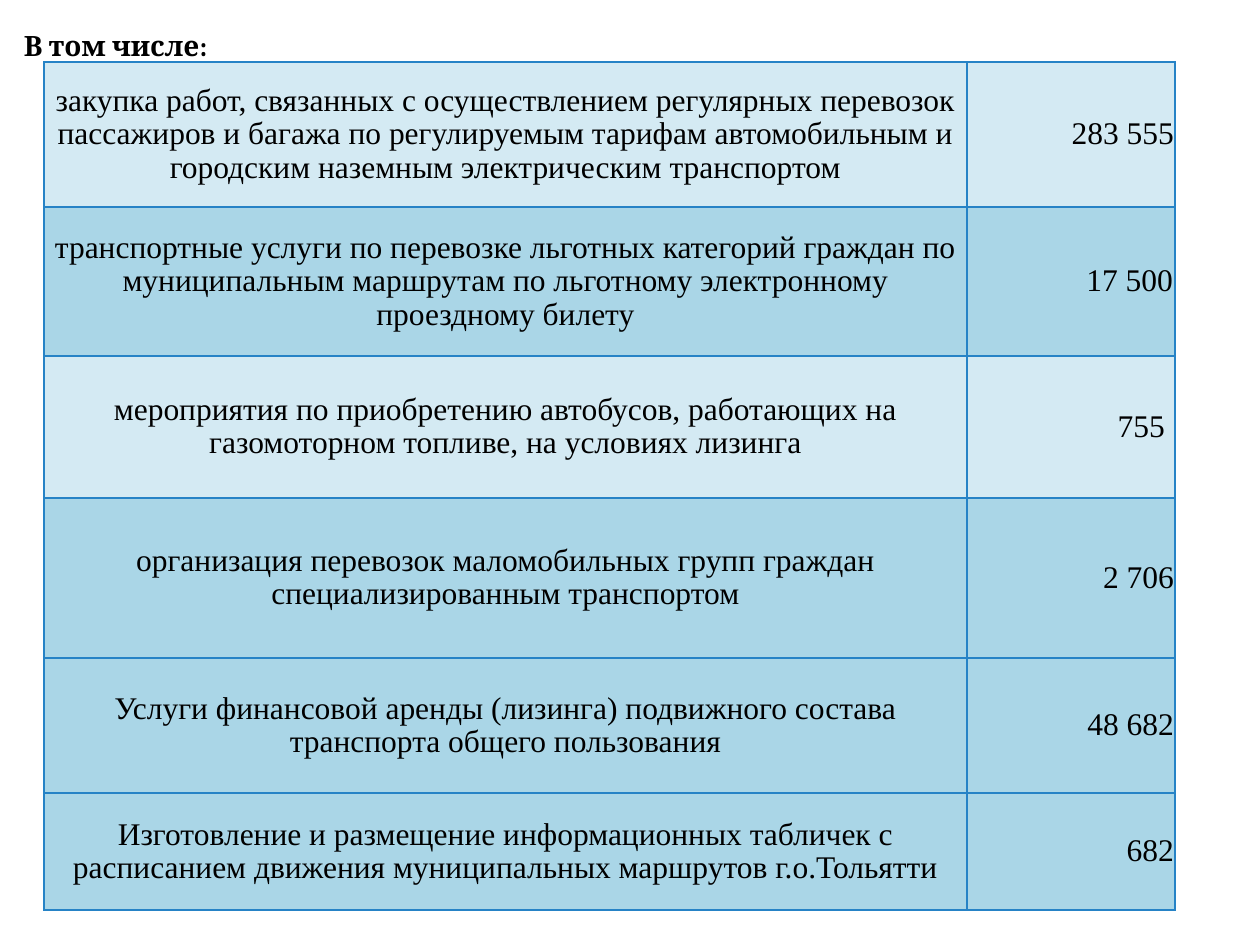
from pptx import Presentation
from pptx.dml.color import RGBColor
from pptx.enum.text import MSO_ANCHOR, PP_ALIGN
from pptx.oxml import parse_xml
from pptx.oxml.ns import nsdecls
from pptx.util import Emu, Pt

PX = 914400 // 126
COLORS = {"text": "000000", "border": "2683C6", "light": "D4EAF3", "dark": "AAD6E7"}
COLUMN_WIDTHS = (923, 208)
# Expense, amount, row height, fill, right margin of the amount
EXPENSES = [
    ("закупка работ, связанных с осуществлением регулярных перевозок пассажиров и багажа "
     "по регулируемым тарифам автомобильным и городским наземным электрическим транспортом",
     "283 555", 145, "light", 1),
    ("транспортные услуги по перевозке льготных категорий граждан по муниципальным "
     "маршрутам по льготному электронному проездному билету", "17 500", 149, "dark", 2),
    ("мероприятия по приобретению автобусов, работающих на газомоторном топливе, "
     "на условиях лизинга", "755", 142, "light", 10),
    ("организация перевозок маломобильных групп граждан специализированным транспортом",
     "2 706", 160, "dark", 1),
    ("Услуги финансовой аренды (лизинга) подвижного состава транспорта общего пользования",
     "48 682", 135, "dark", 1),
    ("Изготовление и размещение информационных табличек с расписанием движения "
     "муниципальных маршрутов г.о.Тольятти", "682", 117, "dark", 1),
]


def px(length):
    return Emu(length * PX)


def color(name):
    return RGBColor.from_string(COLORS[name])


def format_text(frame, font_name, size, align, spacing, bold=False):
    para = frame.paragraphs[0]
    para.alignment = align
    para.line_spacing = spacing
    for span in para.runs:
        span.font.name = font_name
        span.font.size = Pt(size)
        span.font.bold = bold
        span.font.color.rgb = color("text")


def add_heading(page, text):
    box = page.shapes.add_textbox(0, px(26), px(1260), px(69))
    frame = box.text_frame
    frame.word_wrap = True
    frame.margin_left = px(24)
    frame.text = text
    format_text(frame, "Cambria", 16, PP_ALIGN.LEFT, 0.9, bold=True)


def add_borders(cell):
    properties = cell._tc.get_or_add_tcPr()
    for position, side in enumerate(("lnL", "lnR", "lnT", "lnB")):
        properties.insert(position, parse_xml(
            f'<a:{side} {nsdecls("a")} w="{Pt(1)}"><a:solidFill>'
            f'<a:srgbClr val="{COLORS["border"]}"/></a:solidFill></a:{side}>'))


def fill_cell(cell, text, fill, align, right_margin=1):
    cell.text = text
    cell.vertical_anchor = MSO_ANCHOR.MIDDLE
    cell.margin_left = cell.margin_top = px(1)
    cell.margin_right = px(right_margin)
    cell.margin_bottom = 0
    cell.fill.solid()
    cell.fill.fore_color.rgb = color(fill)
    format_text(cell.text_frame, "Times New Roman", 18, align, 0.95)
    add_borders(cell)


def add_expense_table(page):
    total_height = sum(expense[2] for expense in EXPENSES)
    table = page.shapes.add_table(len(EXPENSES), len(COLUMN_WIDTHS), px(44), px(62),
                                  px(sum(COLUMN_WIDTHS)), px(total_height)).table
    table.first_row = table.horz_banding = False
    for column, width in zip(table.columns, COLUMN_WIDTHS):
        column.width = px(width)
    for row, (expense, amount, height, fill, margin) in zip(table.rows, EXPENSES):
        row.height = px(height)
        fill_cell(row.cells[0], expense, fill, PP_ALIGN.CENTER)
        fill_cell(row.cells[1], amount, fill, PP_ALIGN.RIGHT, margin)


def main():
    deck = Presentation()
    deck.slide_width, deck.slide_height = px(1260), px(945)
    page = deck.slides.add_slide(deck.slide_layouts[6])
    add_heading(page, "В том числе:")
    add_expense_table(page)
    deck.save("out.pptx")


if __name__ == "__main__":
    main()
